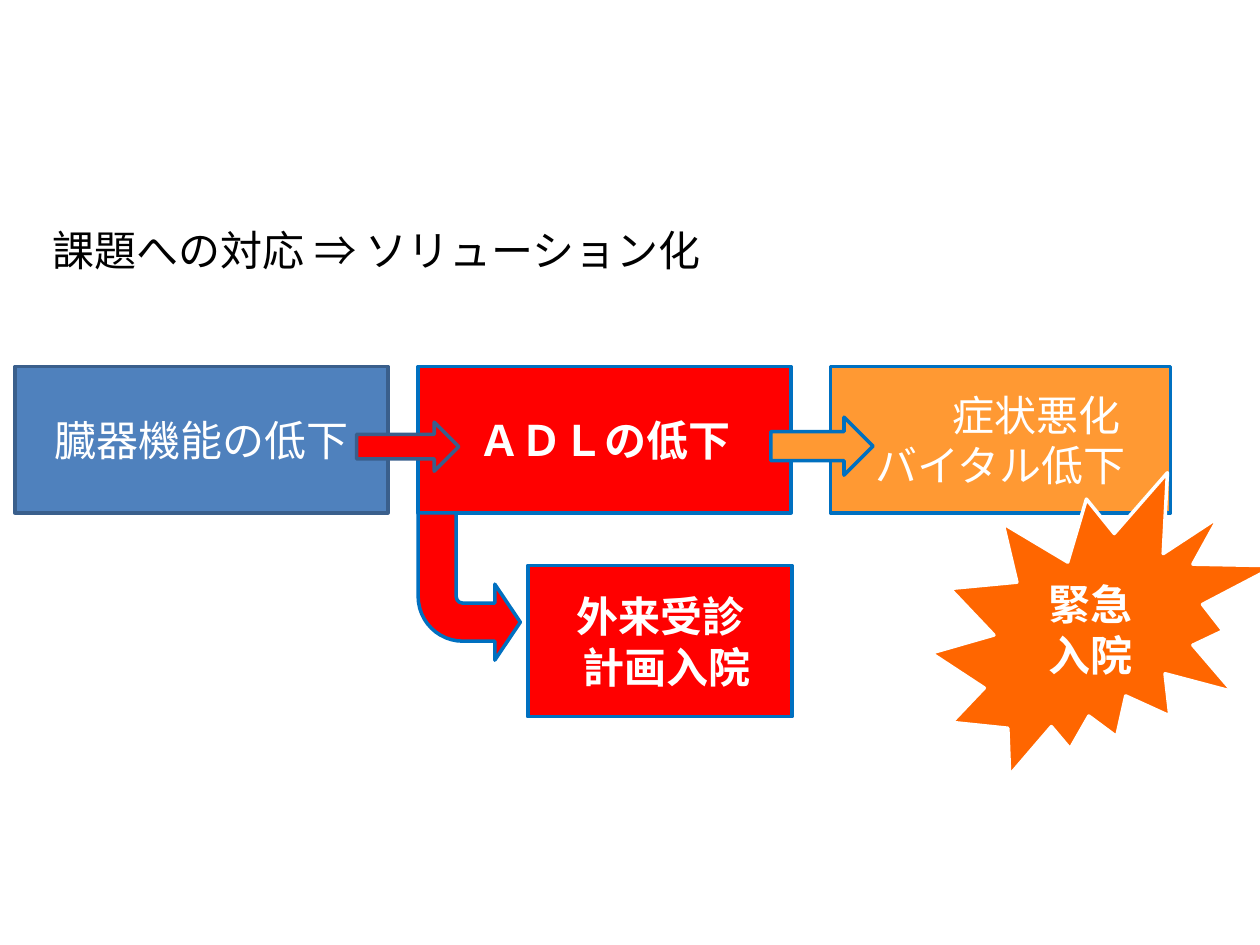
from dataclasses import dataclass

from pptx import Presentation
from pptx import util as u
from pptx.dml.color import RGBColor
from pptx.enum import shapes, text
from pptx.oxml.ns import qn

Kind = shapes.MSO_SHAPE


@dataclass(frozen=True)
class Theme:
    font: str = "Noto Sans CJK JP"
    size: float = 24
    edge: float = 2
    black: str = "000000"
    white: str = "FFFFFF"
    blue: str = "4F81BD"
    navy: str = "3A5F8C"
    azure: str = "0070C0"
    red: str = "FF0000"
    amber: str = "FF9933"
    orange: str = "FF6600"


T = Theme()


@dataclass(frozen=True)
class Line:
    """One paragraph; with an indent (cm) it is set left instead of centred."""
    words: str
    indent: float | None = None


@dataclass(frozen=True)
class Part:
    kind: Kind
    left: float
    top: float
    width: float
    height: float
    fill: str
    edge: str = T.azure
    lines: tuple[Line, ...] = ()
    bold: bool = False
    flip: bool = False
    adjust: tuple[float, ...] = ()


TOP, WIDE, HIGH = 7.39, 7.52, 2.95
ADL = 8.43

PARTS = (
    Part(Kind.RECTANGLE, 0.3, TOP, WIDE, HIGH, T.blue, T.navy,
         (Line("臓器機能の低下"),)),
    Part(Kind.RECTANGLE, ADL, TOP, WIDE, HIGH, T.red,
         lines=(Line("ＡＤＬの低下"),), bold=True),
    Part(Kind.RECTANGLE, 16.74, TOP, 6.86, HIGH, T.amber,
         lines=(Line("症状悪化", 2.22), Line("バイタル低下"))),
    Part(Kind.RIGHT_ARROW, 7.19, 8.51, 2.06, 0.99, T.red, T.navy),
    Part(Kind.RIGHT_ARROW, 15.54, 8.41, 2.06, 1.17, T.amber),
    Part(Kind.EXPLOSION2, 18.77, 9.53, 6.96, 6.1, T.orange, T.white,
         (Line("緊急"), Line("入院")), bold=True),
    Part(Kind.BENT_ARROW, ADL, TOP + HIGH, 2.06, 2.97, T.red, flip=True,
         adjust=(0.372, 0.372, 0.25, 0.438)),
    Part(Kind.RECTANGLE, 10.64, 11.4, 5.33, 3.05, T.red,
         lines=(Line("外来受診", 0.74), Line("計画入院", 0.85)), bold=True),
)


def write(frame, lines: tuple[Line, ...], *, color: str = T.white,
          bold: bool = False) -> None:
    frame.word_wrap = True
    frame.auto_size = text.MSO_AUTO_SIZE.NONE
    frame.vertical_anchor = text.MSO_ANCHOR.MIDDLE
    for i, line in enumerate(lines):
        para = frame.add_paragraph() if i else frame.paragraphs[0]
        if line.indent is None:
            para.alignment = text.PP_ALIGN.CENTER
        else:
            para.alignment = text.PP_ALIGN.LEFT
            props = para._p.get_or_add_pPr()
            props.set("marL", str(int(u.Cm(line.indent))))
            props.set("indent", "0")
        run = para.add_run()
        run.text = line.words
        font = run.font
        font.name, font.size, font.bold = T.font, u.Pt(T.size), bold
        font.color.rgb = RGBColor.from_string(color)
        east = run._r.get_or_add_rPr().makeelement(qn("a:ea"), {"typeface": T.font})
        run._r.rPr.find(qn("a:latin")).addnext(east)


def draw(slide, part: Part) -> None:
    shape = slide.shapes.add_shape(
        part.kind, u.Cm(part.left), u.Cm(part.top),
        u.Cm(part.width), u.Cm(part.height))
    shape.shadow.inherit = False
    shape.fill.solid()
    shape.fill.fore_color.rgb = RGBColor.from_string(part.fill)
    shape.line.color.rgb = RGBColor.from_string(part.edge)
    shape.line.width = u.Pt(T.edge)
    for i, value in enumerate(part.adjust):
        shape.adjustments[i] = value
    if part.flip:
        shape.element.spPr.find(qn("a:xfrm")).set("flipV", "1")
    if part.lines:
        write(shape.text_frame, part.lines, bold=part.bold)


def main() -> None:
    deck = Presentation()
    deck.slide_width, deck.slide_height = u.Cm(25.4), u.Cm(19.05)
    slide = deck.slides.add_slide(deck.slide_layouts.get_by_name("Title Only"))
    title = slide.shapes.title
    title.left, title.top = u.Cm(0.81), u.Cm(4.39)
    title.width, title.height = u.Cm(15.37), u.Cm(1.27)
    write(title.text_frame, (Line("課題への対応 ⇒ ソリューション化", 0),),
          color=T.black)
    for part in PARTS:
        draw(slide, part)
    deck.save("out.pptx")


if __name__ == "__main__":
    main()
